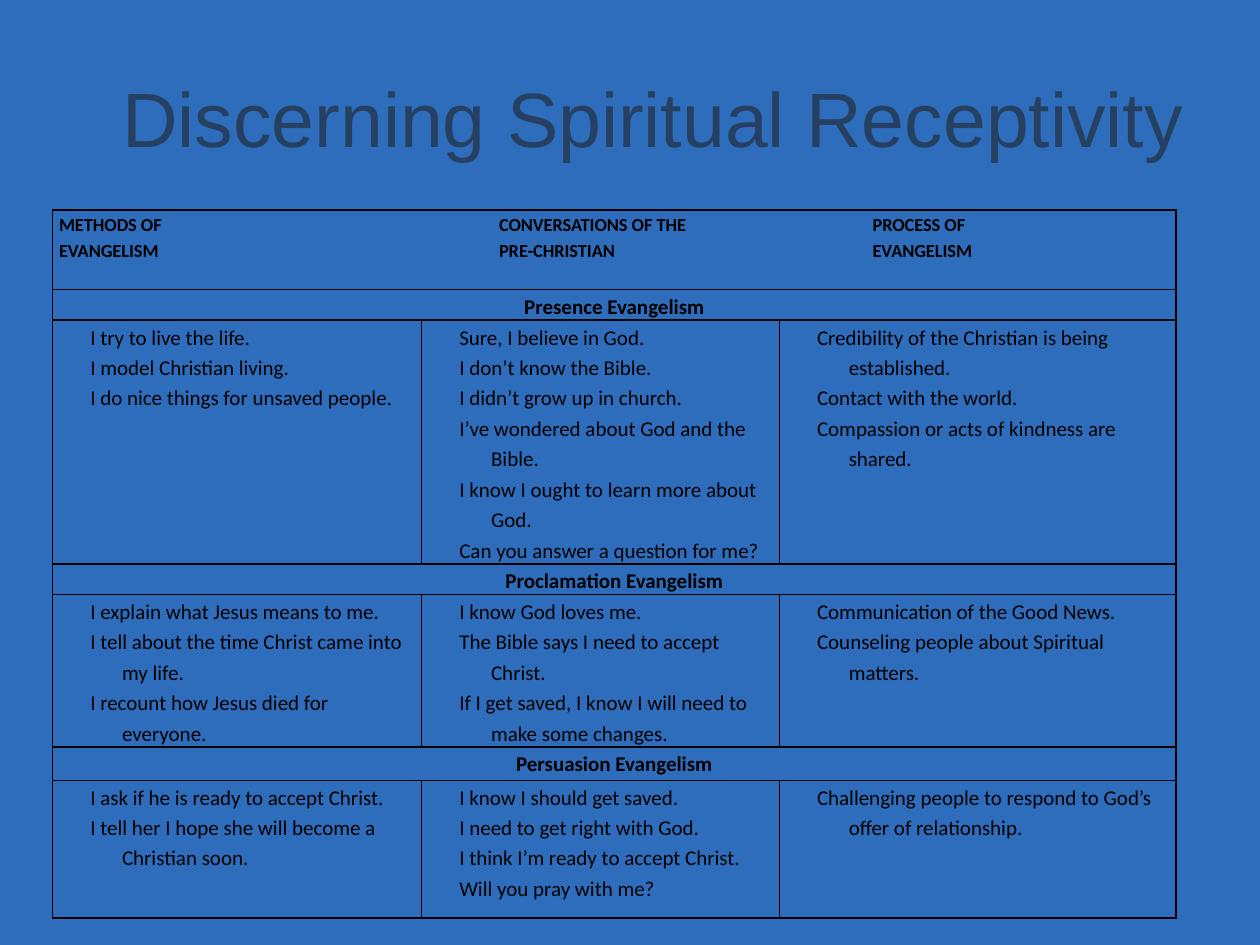
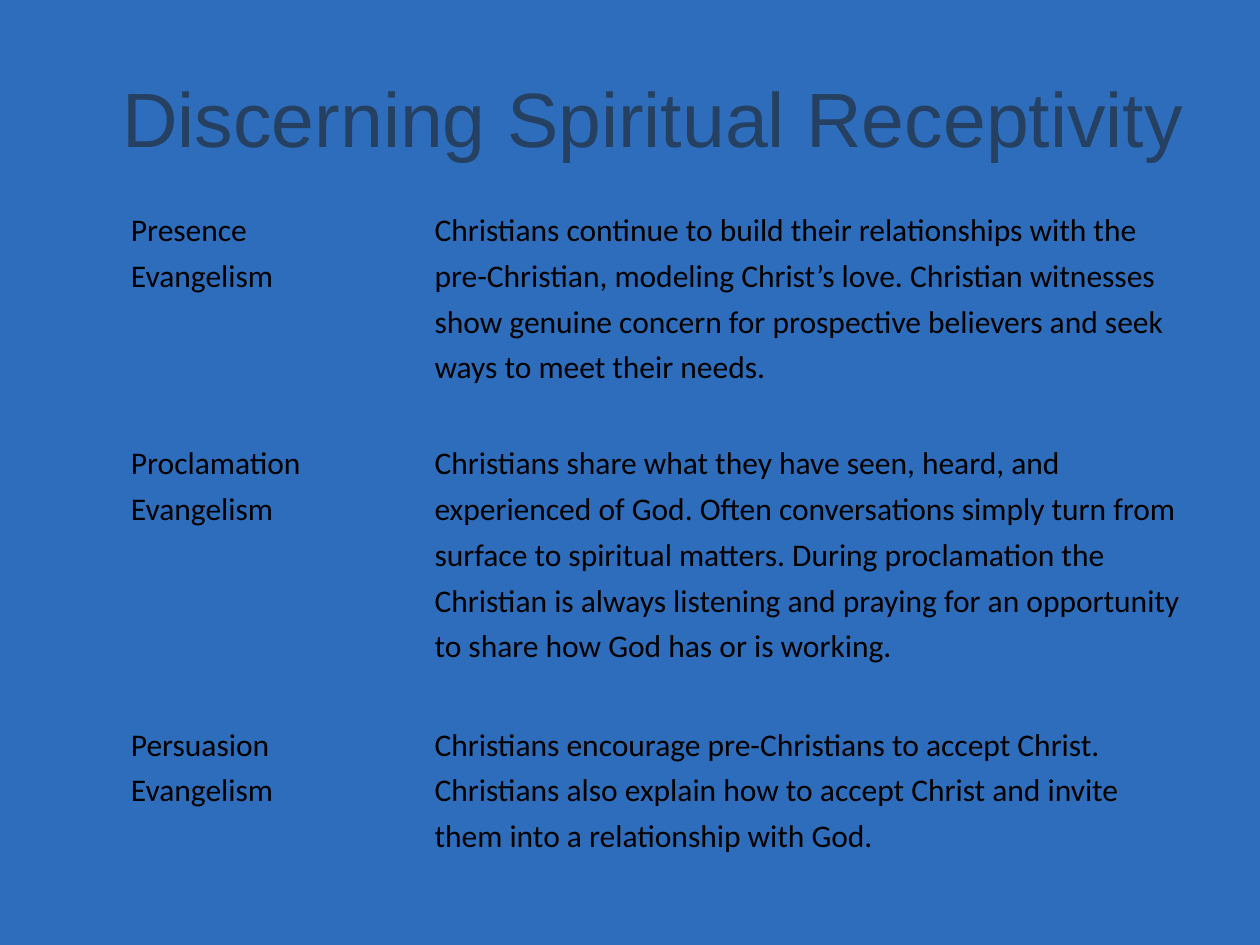
from lxml.etree import SubElement
from pptx import Presentation
from pptx.dml.color import RGBColor
from pptx.enum.text import MSO_ANCHOR as Anchor, PP_ALIGN as Align
from pptx.oxml.ns import qn
from pptx.util import Cm, Pt

COLORS = {"background": "2E6DBB", "title": "254061", "text": "000000", "grid": "000000"}
TITLE = "Discerning Spiritual Receptivity"
TITLE_FONT, TABLE_FONT = "Arial", "Calibri"
LINE_SPACING = 1.19
TITLE_ONLY = 5
HEADING_TABS = (Cm(8.87), Cm(16.4))

HEADINGS = [
    "METHODS OF\tCONVERSATIONS OF THE\tPROCESS OF",
    "EVANGELISM\tPRE-CHRISTIAN\tEVANGELISM",
]
STAGES = [
    ("Presence Evangelism", [
        ["I try to live the life.",
         "I model Christian living.",
         "I do nice things for unsaved people."],
        ["Sure, I believe in God.",
         "I don’t know the Bible.",
         "I didn’t grow up in church.",
         "I’ve wondered about God and the Bible.",
         "I know I ought to learn more about God.",
         "Can you answer a question for me?"],
        ["Credibility of the Christian is being established.",
         "Contact with the world.",
         "Compassion or acts of kindness are shared."],
    ]),
    ("Proclamation Evangelism", [
        ["I explain what Jesus means to me.",
         "I tell about the time Christ came into my life.",
         "I recount how Jesus died for everyone."],
        ["I know God loves me.",
         "The Bible says I need to accept Christ.",
         "If I get saved, I know I will need to make some changes."],
        ["Communication of the Good News.",
         "Counseling people about Spiritual matters."],
    ]),
    ("Persuasion Evangelism", [
        ["I ask if he is ready to accept Christ.",
         "I tell her I hope she will become a Christian soon."],
        ["I know I should get saved.",
         "I need to get right with God.",
         "I think I’m ready to accept Christ.",
         "Will you pray with me?"],
        ["Challenging people to respond to God’s offer of relationship."],
    ]),
]
DEFINITIONS = [
    ("Presence\vEvangelism",
     "Christians continue to build their relationships with the pre-Christian, "
     "modeling Christ’s love. Christian witnesses show genuine concern for "
     "prospective believers and seek ways to meet their needs."),
    ("Proclamation\vEvangelism",
     "Christians share what they have seen, heard, and experienced of God. Often "
     "conversations simply turn from surface to spiritual matters. During "
     "proclamation the Christian is always listening and praying for an "
     "opportunity to share how God has or is working."),
    ("Persuasion\vEvangelism",
     "Christians encourage pre-Christians to accept Christ. Christians also "
     "explain how to accept Christ and invite them into a relationship with God."),
]


def rgb(name):
    return RGBColor.from_string(COLORS[name])


def add_titled_slide(prs):
    slide = prs.slides.add_slide(prs.slide_layouts[TITLE_ONLY])
    title = slide.shapes.title
    title.left, title.top, title.width, title.height = Cm(1.27), Cm(0.76), Cm(22.86), Cm(3.18)
    title.text_frame.text = TITLE
    title.text_frame.vertical_anchor = Anchor.MIDDLE
    heading = title.text_frame.paragraphs[0]
    heading.alignment = Align.RIGHT
    heading.font.name, heading.font.size = TITLE_FONT, Pt(44)
    heading.font.color.rgb = rgb("title")
    return slide


def set_borders(cell, visible):
    properties = cell._tc.get_or_add_tcPr()
    for side in ("lnL", "lnR", "lnT", "lnB"):
        line = SubElement(properties, qn(f"a:{side}"), w=str(Pt(1)))
        if visible:
            fill = SubElement(line, qn("a:solidFill"))
            SubElement(fill, qn("a:srgbClr"), val=COLORS["grid"])
        else:
            SubElement(line, qn("a:noFill"))


def add_plain_table(slide, left, top, widths, heights, margins, bordered):
    table = slide.shapes.add_table(len(heights), len(widths), left, top,
                                   sum(widths), sum(heights)).table
    table.first_row = table.horz_banding = False
    for column, width in zip(table.columns, widths):
        column.width = width
    for row, height in zip(table.rows, heights):
        row.height = height
    for cell in table.iter_cells():
        set_borders(cell, bordered)
        cell.fill.background()
        cell.margin_left = cell.margin_right = margins[0]
        cell.margin_top = cell.margin_bottom = margins[1]
    return table


def write_cell(cell, lines, size, bold=False, align=Align.LEFT, space_after=0):
    cell.text_frame.text = "\n".join(lines) if len(lines) > 1 else ""
    if len(lines) == 1:
        cell.text_frame.paragraphs[0].text = lines[0]
    for paragraph in cell.text_frame.paragraphs:
        paragraph.alignment = align
        paragraph.line_spacing = LINE_SPACING
        paragraph.space_after = Pt(space_after)
        font = paragraph.font
        font.name, font.size, font.bold = TABLE_FONT, Pt(size), bold
        font.color.rgb = rgb("text")


def hang_lines(cell):
    for paragraph in cell.text_frame.paragraphs:
        properties = paragraph._p.get_or_add_pPr()
        properties.set("marL", str(Cm(1.27)))
        properties.set("indent", str(-Cm(0.64)))


def set_tabs(cell, positions):
    for paragraph in cell.text_frame.paragraphs:
        tabs = paragraph._p.get_or_add_pPr().find(qn("a:defRPr"))
        tab_list = SubElement(paragraph._p.pPr, qn("a:tabLst"))
        if tabs is not None:
            tabs.addprevious(tab_list)
        for position in positions:
            SubElement(tab_list, qn("a:tab"), pos=str(position), algn="l")


def merge_row(table, row):
    cell = table.cell(row, 0)
    cell.merge(table.cell(row, len(table.columns) - 1))
    return cell


def add_stages(slide):
    widths = [Cm(w) for w in (7.44, 7.21, 8)]
    heights = [Cm(h) for h in (1.61, 0.61, 4.9, 0.62, 3.07, 0.67, 2.78)]
    table = add_plain_table(slide, Cm(1.06), Cm(4.23), widths, heights,
                            (Cm(0.13), Cm(0)), bordered=True)
    headings = merge_row(table, 0)
    write_cell(headings, HEADINGS, 10.5, bold=True)
    set_tabs(headings, HEADING_TABS)
    for index, (stage, columns) in enumerate(STAGES):
        row = 1 + 2 * index
        write_cell(merge_row(table, row), [stage], 12, bold=True, align=Align.CENTER)
        for column, lines in enumerate(columns):
            cell = table.cell(row + 1, column)
            write_cell(cell, lines, 12)
            hang_lines(cell)


def add_definitions(slide):
    widths = [Cm(6.12), Cm(15.27)]
    heights = [Cm(h) for h in (4.7, 5.67, 3.6)]
    table = add_plain_table(slide, Cm(2.54), Cm(4.02), widths, heights,
                            (Cm(0.1), Cm(0.1)), bordered=False)
    for row, definition in enumerate(DEFINITIONS):
        for column, wording in enumerate(definition):
            write_cell(table.cell(row, column), [wording], 18, space_after=6)


def main():
    prs = Presentation()
    prs.slide_width, prs.slide_height = Cm(25.4), Cm(19.05)
    backdrop = prs.slide_master.background.fill
    backdrop.solid()
    backdrop.fore_color.rgb = rgb("background")
    add_stages(add_titled_slide(prs))
    add_definitions(add_titled_slide(prs))
    prs.save("out.pptx")


if __name__ == "__main__":
    main()
